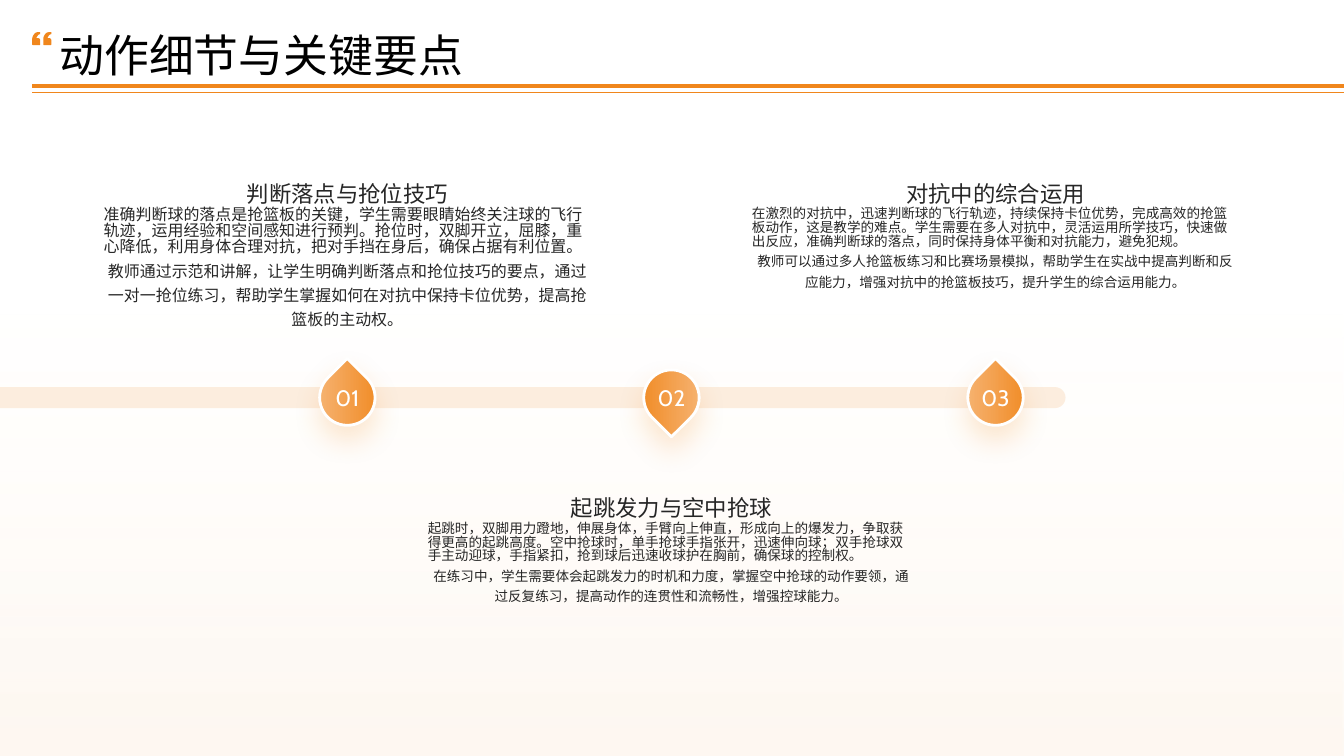
import pptx
import pptx.util
import pptx.dml.color
import pptx.enum.shapes
import pptx.enum.text
import pptx.oxml
import pptx.oxml.ns

Pt = pptx.util.Pt
RGB = pptx.dml.color.RGBColor.from_string
SHAPE = pptx.enum.shapes.MSO_SHAPE
ALIGN = pptx.enum.text.PP_ALIGN
ANCHOR = pptx.enum.text.MSO_ANCHOR
NS = pptx.oxml.ns.nsdecls("a")

COLORS = {
    "orange": "F0861C", "light": "F6B677", "sand": "F9CFA4", "cream": "FCE7D2",
    "white": "FFFFFF", "ink": "262626", "black": "000000",
}
CJK = "Noto Sans CJK SC"
PAGE_WIDTH, PAGE_HEIGHT = 960, 540
COLUMN_WIDTH, FIRST_CENTER, STEP = 348, 248.1, 231.5
UPPER, LOWER = 103.7, 328.5

STAGES = [
    ("判断落点与抢位技巧", 11.4, UPPER, 315, (
        "准确判断球的落点是抢篮板的关键，学生需要眼睛始终关注球的飞行轨迹，运用经验和空间感知进行预判。"
        "抢位时，双脚开立，屈膝，重心降低，利用身体合理对抗，把对手挡在身后，确保占据有利位置。",
        "教师通过示范和讲解，让学生明确判断落点和抢位技巧的要点，通过一对一抢位练习，"
        "帮助学生掌握如何在对抗中保持卡位优势，提高抢篮板的主动权。")),
    ("起跳发力与空中抢球", 9.7, LOWER, 135, (
        "起跳时，双脚用力蹬地，伸展身体，手臂向上伸直，形成向上的爆发力，争取获得更高的起跳高度。"
        "空中抢球时，单手抢球手指张开，迅速伸向球；双手抢球双手主动迎球，手指紧扣，"
        "抢到球后迅速收球护在胸前，确保球的控制权。",
        "在练习中，学生需要体会起跳发力的时机和力度，掌握空中抢球的动作要领，通过反复练习，"
        "提高动作的连贯性和流畅性，增强控球能力。")),
    ("对抗中的综合运用", 9.7, UPPER, 315, (
        "在激烈的对抗中，迅速判断球的飞行轨迹，持续保持卡位优势，完成高效的抢篮板动作，这是教学的难点。"
        "学生需要在多人对抗中，灵活运用所学技巧，快速做出反应，准确判断球的落点，"
        "同时保持身体平衡和对抗能力，避免犯规。",
        "教师可以通过多人抢篮板练习和比赛场景模拟，帮助学生在实战中提高判断和反应能力，"
        "增强对抗中的抢篮板技巧，提升学生的综合运用能力。")),
]

# Quote mark outline in hundredths of an inch: two numbers a line, six a curve
QUOTE_START = (0, 7)
QUOTE_OUTLINE = [
    (0, 5, 1, 3, 2, 2), (3, 0, 5, 0, 8, 0), (8, 2), (6, 2, 5, 4, 4, 6), (6, 6),
    (7, 6, 8, 7, 8, 8), (8, 12), (8, 13, 7, 13, 6, 13), (2, 13), (1, 13, 0, 13, 0, 12),
]


def add_text(page, box, paragraphs, size, color, font=CJK, anchor=ANCHOR.TOP):
    """Place paragraphs given as (text, alignment, line spacing)."""
    frame = page.shapes.add_textbox(*map(Pt, box)).text_frame
    settings = dict(word_wrap=True, vertical_anchor=anchor, margin_left=0,
                    margin_right=0, margin_top=0, margin_bottom=0)
    for name, value in settings.items():
        setattr(frame, name, value)
    for index, (text, alignment, spacing) in enumerate(paragraphs):
        para = frame.add_paragraph() if index else frame.paragraphs[0]
        para.alignment, para.line_spacing = alignment, spacing
        span = para.add_run()
        span.text = text
        span.font.size, span.font.name = Pt(size), font
        span.font.color.rgb = RGB(COLORS[color])
        for tag in ("a:ea", "a:cs"):
            span.font._element.append(pptx.oxml.parse_xml(f'<{tag} {NS} typeface="{font}"/>'))


def add_plain_shape(page, kind, box, color):
    shape = page.shapes.add_shape(kind, *map(Pt, box))
    shape.shadow.inherit = False
    shape.fill.solid()
    shape.fill.fore_color.rgb = RGB(COLORS[color])
    shape.line.fill.background()
    return shape


def set_gradient(shape, stops, angle):
    """Fill with stops given as (position, colour, opacity), all in percent."""
    marks = "".join(
        f'<a:gs pos="{position * 1000}"><a:srgbClr val="{COLORS[color]}">'
        f'<a:alpha val="{opacity * 1000}"/></a:srgbClr></a:gs>'
        for position, color, opacity in stops)
    gradient = pptx.oxml.parse_xml(
        f'<a:gradFill {NS} rotWithShape="1"><a:gsLst>{marks}</a:gsLst>'
        f'<a:lin ang="{angle * 60000}" scaled="0"/></a:gradFill>')
    properties = shape._element.spPr
    solid = properties.find(pptx.oxml.ns.qn("a:solidFill"))
    properties.replace(solid, gradient)


def add_backdrop(page):
    wash = add_plain_shape(page, SHAPE.RECTANGLE, (0, 0, PAGE_WIDTH, PAGE_HEIGHT), "cream")
    set_gradient(wash, [(41, "cream", 0), (97, "sand", 15)], 90)
    bar = add_plain_shape(page, SHAPE.ROUNDED_RECTANGLE, (-32.4, 276.5, 793.5, 15), "cream")
    bar.adjustments[0] = 0.5
    tint = bar._element.spPr.find(".//" + pptx.oxml.ns.qn("a:srgbClr"))
    tint.append(pptx.oxml.parse_xml(f'<a:alpha {NS} val="70000"/>'))


def add_marker(page, center, label, rotation):
    size, top = 39.6, 264.2
    drop = add_plain_shape(page, SHAPE.TEAR, (center - size / 2, top, size, size), "orange")
    set_gradient(drop, [(6, "light", 100), (100, "orange", 100)], 45)
    drop.rotation = rotation
    drop.line.color.rgb = RGB(COLORS["white"])
    drop.line.width = Pt(2)
    effects = drop._element.spPr.find(pptx.oxml.ns.qn("a:effectLst"))
    effects.append(pptx.oxml.parse_xml(
        f'<a:outerShdw {NS} blurRad="{Pt(20)}" dist="{Pt(10)}" dir="5400000" rotWithShape="0">'
        f'<a:srgbClr val="{COLORS["orange"]}"><a:alpha val="20000"/></a:srgbClr></a:outerShdw>'))
    add_text(page, (center - 16, top + 10.1, 32, 18), [(label, ALIGN.CENTER, 1.1)],
             16, "white", "Cabin", ANCHOR.MIDDLE)


def add_stage(page, box, heading, size, body):
    left, top, width = box
    add_text(page, (left, top, width, 44), [(heading, ALIGN.CENTER, 1.3)],
             16, "ink", anchor=ANCHOR.BOTTOM)
    summary, practice = body
    add_text(page, (left, top + 44.8, width, 99.4),
             [(summary, ALIGN.LEFT, 0.84), (practice, ALIGN.CENTER, 1.26)], size, "ink")


def quote_points(shift, steps=6):
    """Return the outline of one quote mark with its curves divided into steps."""
    points = [QUOTE_START]
    for segment in QUOTE_OUTLINE:
        if len(segment) == 2:
            points.append(segment)
            continue
        corners = [points[-1], segment[:2], segment[2:4], segment[4:]]
        for step in range(1, steps + 1):
            t = step / steps
            weights = ((1 - t) ** 3, 3 * t * (1 - t) ** 2, 3 * t * t * (1 - t), t ** 3)
            points.append(tuple(sum(weight * corner[axis] for weight, corner in zip(weights, corners))
                                for axis in (0, 1)))
    return [(round((x + shift) * 72), round(y * 72)) for x, y in points]


def add_header(page, left, top):
    add_text(page, (left + 19.5, top - 5, 876, 34), [("动作细节与关键要点", ALIGN.LEFT, 1.2)],
             32, "black", anchor=ANCHOR.MIDDLE)
    first, second = quote_points(0), quote_points(11)
    builder = page.shapes.build_freeform(*first[0], scale=Pt(1) / 100)
    builder.add_line_segments(first[1:], close=True)
    builder.move_to(*second[0])
    builder.add_line_segments(second[1:], close=True)
    quote = builder.convert_to_shape(Pt(left), Pt(top))
    quote.shadow.inherit = False
    quote.fill.solid()
    quote.fill.fore_color.rgb = RGB(COLORS["orange"])
    quote.line.fill.background()
    for drop, weight in ((38.2, 3), (43.2, 0.75)):
        rule = page.shapes.add_connector(pptx.enum.shapes.MSO_CONNECTOR.STRAIGHT, Pt(left),
                                         Pt(top + drop), Pt(PAGE_WIDTH), Pt(top + drop))
        rule.line.color.rgb = RGB(COLORS["orange"])
        rule.line.width = Pt(weight)
        rule._element.spPr.append(pptx.oxml.parse_xml(f"<a:effectLst {NS}/>"))


def main():
    deck = pptx.Presentation()
    deck.slide_width, deck.slide_height = Pt(PAGE_WIDTH), Pt(PAGE_HEIGHT)
    page = deck.slides.add_slide(deck.slide_layouts[6])
    add_backdrop(page)
    for index, (heading, size, top, rotation, body) in enumerate(STAGES):
        center = FIRST_CENTER + index * STEP
        add_marker(page, center, f"{index + 1:02}", rotation)
        add_stage(page, (center - COLUMN_WIDTH / 2, top, COLUMN_WIDTH), heading, size, body)
    add_header(page, 23, 23)
    deck.save("out.pptx")


if __name__ == "__main__":
    main()
